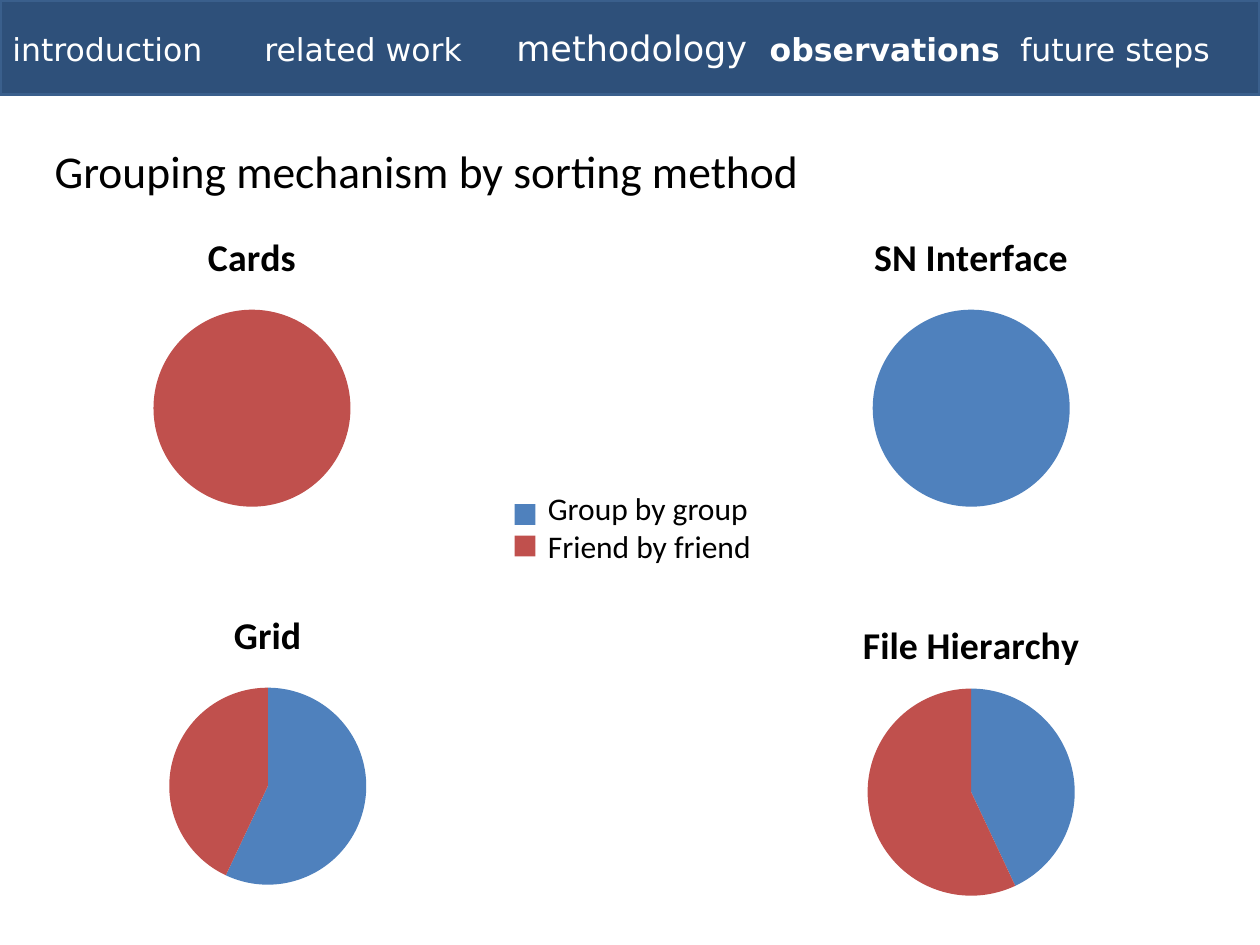
from lxml.etree import SubElement
from pptx import Presentation
from pptx.chart.data import CategoryChartData
from pptx.dml.color import RGBColor
from pptx.enum.chart import XL_CHART_TYPE
from pptx.enum.shapes import MSO_SHAPE
from pptx.enum.text import MSO_ANCHOR, PP_ALIGN
from pptx.oxml import parse_xml
from pptx.oxml.ns import nsdecls, qn
from pptx.util import Pt

HUES = {"bar": "2E507A", "edge": "3A5F8C", "group": "4F81BD",
        "friend": "C0504D", "white": "FFFFFF", "black": "000000"}
NAV = [("introduction\trelated work\t", 18, False), ("methodology  ", 20, False),
       ("observations\t", 18, True), ("future steps", 18, False)]
HEAD = "Grouping mechanism by sorting method"
PIES = [
    ("Cards", "Cards", (0, 100), (0, 120, 288, 180), 57, 112.6),
    ("SN Interface", "SN Interface", (100, 0), (426, 120, 258, 180), 57, 112.6),
    ("Grid", "Grid", (57, 43), (24, 336, 258, 180), 57, 112.6),
    ("File Hierarchy", "Series 1", (43, 57), (426, 342, 258, 180), 51.5, 118.4),
]
KEYS = [("Group by group", "group"), ("Friend by friend", "friend")]


def hue(name):
    return RGBColor.from_string(HUES[name])


def style(font, size, color="black", face="Calibri", bold=False):
    for key, val in {"size": Pt(size), "name": face, "bold": bold}.items():
        setattr(font, key, val)
    font.color.rgb = hue(color)


def box(slide, spot, color):
    shape = slide.shapes.add_shape(MSO_SHAPE.RECTANGLE, *map(Pt, spot))
    shape.shadow.inherit = False
    shape.fill.solid()
    shape.fill.fore_color.rgb = hue(color)
    shape.line.fill.background()
    return shape


def add_nav(slide):
    bar = box(slide, (0, 0, 720, 54), "bar")
    bar.line.color.rgb = hue("edge")
    bar.line.width = Pt(2)
    bar.text_frame.vertical_anchor = MSO_ANCHOR.MIDDLE
    para = bar.text_frame.paragraphs[0]
    para.alignment = PP_ALIGN.LEFT
    para._p.get_or_add_pPr().set("defTabSz", str(Pt(72)))
    for text, size, bold in NAV:
        run = para.add_run()
        run.text = text
        style(run.font, size, "white", "DejaVu Sans", bold)


def add_head(slide):
    head = slide.shapes.title
    spot = {"left": 24, "top": 78, "width": 660, "height": 39}
    for key, val in spot.items():
        setattr(head, key, Pt(val))
    frame = head.text_frame
    frame.text = HEAD
    frame.vertical_anchor = MSO_ANCHOR.TOP
    para = frame.paragraphs[0]
    para.alignment = PP_ALIGN.LEFT
    style(para.runs[0].font, 26)


def place(chart, wide, high, top, size):
    area = chart._chartSpace.chart.plotArea
    old = area.find(qn("c:layout"))
    if old is not None:
        area.remove(old)
    layout = parse_xml(f"<c:layout {nsdecls('c')}/>")
    area.insert(0, layout)
    man = SubElement(layout, qn("c:manualLayout"))
    vals = {"layoutTarget": "inner", "xMode": "edge", "yMode": "edge",
            "x": (wide - size) / 2 / wide, "y": top / high,
            "w": size / wide, "h": size / high}
    for key, val in vals.items():
        SubElement(man, qn(f"c:{key}")).set("val", str(val))


def add_pie(slide, title, name, vals, spot, top, size):
    data = CategoryChartData()
    data.categories = ["1", "2"]
    data.add_series(name, vals)
    chart = slide.shapes.add_chart(XL_CHART_TYPE.PIE, *map(Pt, spot), data).chart
    style(chart.font, 18)
    chart.has_legend = False
    chart.has_title = True
    chart.chart_title.include_in_layout = False
    frame = chart.chart_title.text_frame
    frame.text = title
    style(frame.paragraphs[0].runs[0].font, 21.6, bold=True)
    plot = chart.plots[0]
    plot.vary_by_categories = True
    for i, (_, color) in enumerate(KEYS):
        fill = plot.series[0].points[i].format.fill
        fill.solid()
        fill.fore_color.rgb = hue(color)
    place(chart, spot[2], spot[3], top, size)


def add_keys(slide):
    frame = slide.shapes.add_textbox(Pt(306), Pt(276), Pt(132), Pt(51)).text_frame
    frame.word_wrap = True
    frame.text = "\n".join(text for text, _ in KEYS)
    for i, (para, (_, color)) in enumerate(zip(frame.paragraphs, KEYS)):
        style(para.runs[0].font, 18)
        box(slide, (294, 288 + 18 * i, 12, 12), color)


def main():
    deck = Presentation()
    deck.slide_width, deck.slide_height = Pt(720), Pt(540)
    slide = deck.slides.add_slide(deck.slide_layouts[5])
    add_nav(slide)
    add_head(slide)
    for pie in PIES:
        add_pie(slide, *pie)
    add_keys(slide)
    deck.save("out.pptx")


if __name__ == "__main__":
    main()
